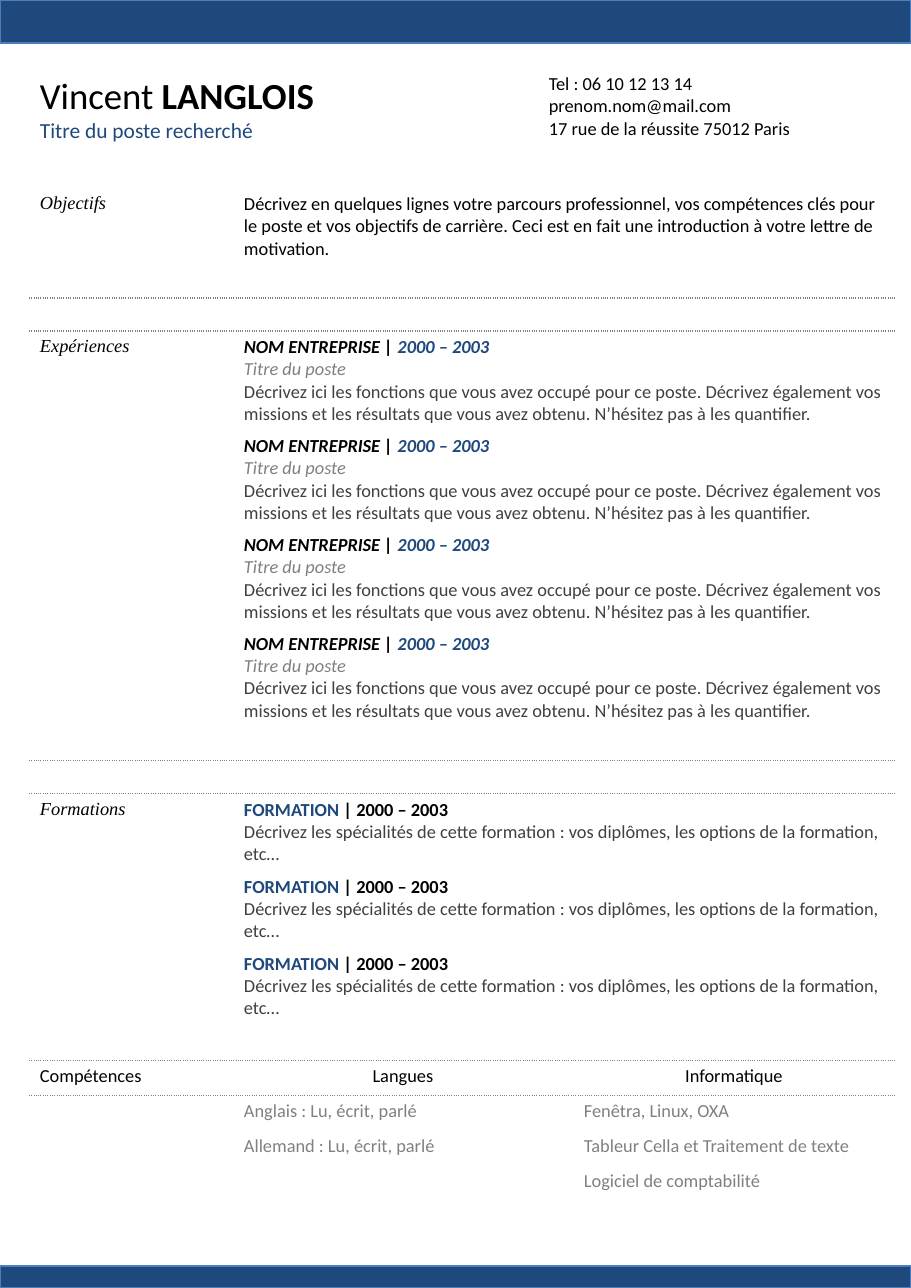
from pptx import Presentation
from pptx.dml.color import RGBColor
from pptx.enum.shapes import MSO_SHAPE
from pptx.enum.text import PP_ALIGN
from pptx.oxml import parse_xml
from pptx.oxml.ns import nsdecls
from pptx.util import Pt

PX = 8298  # EMU per px
BLACK, NAVY, GREY, DARK = "000000", "1F497D", "808080", "404040"


def rgb(color):
    return RGBColor.from_string(color)


def write(p, texts, colors=(BLACK,), size=12, bold=False, italic=False, font="Calibri"):
    p.font.size, p.font.name = Pt(size), font
    p.font.bold, p.font.italic = bold, italic
    if len(colors) == 1:
        p.font.color.rgb = rgb(colors[0])
    for i, text in enumerate(texts):
        r = p.add_run()
        r.text = text
        if len(colors) > 1:
            r.font.color.rgb = rgb(colors[i])


prs = Presentation()
prs.slide_width, prs.slide_height = 911 * PX, 1288 * PX
s = prs.slides.add_slide(prs.slide_layouts[6])

# Bands at top and bottom
for top, height in ((0, 43), (1266, 22)):
    band = s.shapes.add_shape(MSO_SHAPE.RECTANGLE, 0, top * PX, 911 * PX, height * PX)
    band.shadow.inherit = False
    band.fill.solid()
    band.fill.fore_color.rgb = rgb(NAVY)
    band.line.color.rgb = rgb("4B7EBC")
    band.line.width = Pt(0.75)

# Name, job title and contact details
header = [
    (29, 67, 299, 55, ["Vincent ", "LANGLOIS"], 24, BLACK),
    (29, 112, 239, 37, ["Titre du poste recherché"], 14, NAVY),
    (538, 67, 169, 33, ["Tel : 06 10 12 13 14"], 12, BLACK),
    (538, 89, 207, 33, ["prenom.nom@mail.com"], 12, BLACK),
    (538, 112, 268, 33, ["17 rue de la réussite 75012 Paris"], 12, BLACK),
]
for x, y, w, h, texts, size, color in header:
    tf = s.shapes.add_textbox(x * PX, y * PX, w * PX, h * PX).text_frame
    tf.word_wrap = False
    p = tf.paragraphs[0]
    write(p, texts, [color], size)
    if len(texts) > 1:
        p.runs[1].font.bold = True

# Table grid
heights = [77, 33, 33] + [99] * 4 + [34, 33] + [77] * 3 + [36] + [35] * 4
widths = [204, 340, 322]
SKILLS = 13  # first row of the skills section
frame = s.shapes.add_table(len(heights), 3, 29 * PX, 188 * PX, sum(widths) * PX, sum(heights) * PX)
table = frame.table
table.first_row = table.horz_banding = False
table._tbl.tblPr[0].text = "{2D5ABB26-0587-4C30-8999-92F81FD0307C}"  # no style, no grid
for column, width in zip(table.columns, widths):
    column.width = width * PX
for row, height in zip(table.rows, heights):
    row.height = height * PX
for row in range(SKILLS):
    table.cell(row, 1).merge(table.cell(row, 2))
for cell in table.iter_cells():
    cell.fill.background()
    cell.margin_top, cell.margin_bottom = 5 * PX, 4 * PX

# Dotted separators, shared by the rows above and below
for row in (1, 7, 12):
    for side, r in (("lnB", row), ("lnT", row + 1)):
        for col in range(3):
            table.cell(r, col)._tc.get_or_add_tcPr().insert(0, parse_xml(
                f'<a:{side} {nsdecls("a")} w="12700"><a:solidFill><a:srgbClr val="{GREY}"/>'
                f'</a:solidFill><a:prstDash val="sysDot"/></a:{side}>'))

# Section labels and objectives
for row, label in ((0, "Objectifs"), (3, "Expériences"), (9, "Formations")):
    write(table.cell(row, 0).text_frame.paragraphs[0], [label], italic=True, font="Times New Roman")
write(table.cell(0, 1).text_frame.paragraphs[0], [
    "Décrivez en quelques lignes votre parcours professionnel, vos compétences clés pour le poste "
    "et vos objectifs de carrière. Ceci est en fait une introduction à votre lettre de motivation."])

# Jobs
for row in range(3, 7):
    tf = table.cell(row, 1).text_frame
    write(tf.paragraphs[0], ["NOM ENTREPRISE | ", "2000 – 2003"], [BLACK, NAVY], bold=True, italic=True)
    write(tf.add_paragraph(), ["Titre du poste"], [GREY], italic=True)
    write(tf.add_paragraph(), [
        "Décrivez ici les fonctions que vous avez occupé pour ce poste. Décrivez également vos "
        "missions et les résultats que vous avez obtenu. N’hésitez pas à les quantifier."], [DARK])

# Education
for row in range(9, 12):
    tf = table.cell(row, 1).text_frame
    write(tf.paragraphs[0], ["FORMATION", " | 2000 – 2003"], [NAVY, BLACK], bold=True)
    write(tf.add_paragraph(), [
        "Décrivez les spécialités de cette formation : vos diplômes, les options de la formation, "
        "etc…"], [DARK])

# Skills
skills = [
    ["Compétences"],
    ["Langues", "Anglais : Lu, écrit, parlé", "Allemand : Lu, écrit, parlé"],
    ["Informatique", "Fenêtra, Linux, OXA", "Tableur Cella et Traitement de texte",
     "Logiciel de comptabilité"],
]
for col, entries in enumerate(skills):
    for i, entry in enumerate(entries):
        p = table.cell(SKILLS + i, col).text_frame.paragraphs[0]
        write(p, [entry], [GREY if i else BLACK])
        if col and i == 0:
            p.alignment = PP_ALIGN.CENTER

# Small type in empty cells keeps the row heights
for cell in table.iter_cells():
    if not cell.text_frame.text:
        cell.text_frame.paragraphs[0].font.size = Pt(12)

prs.save("out.pptx")
